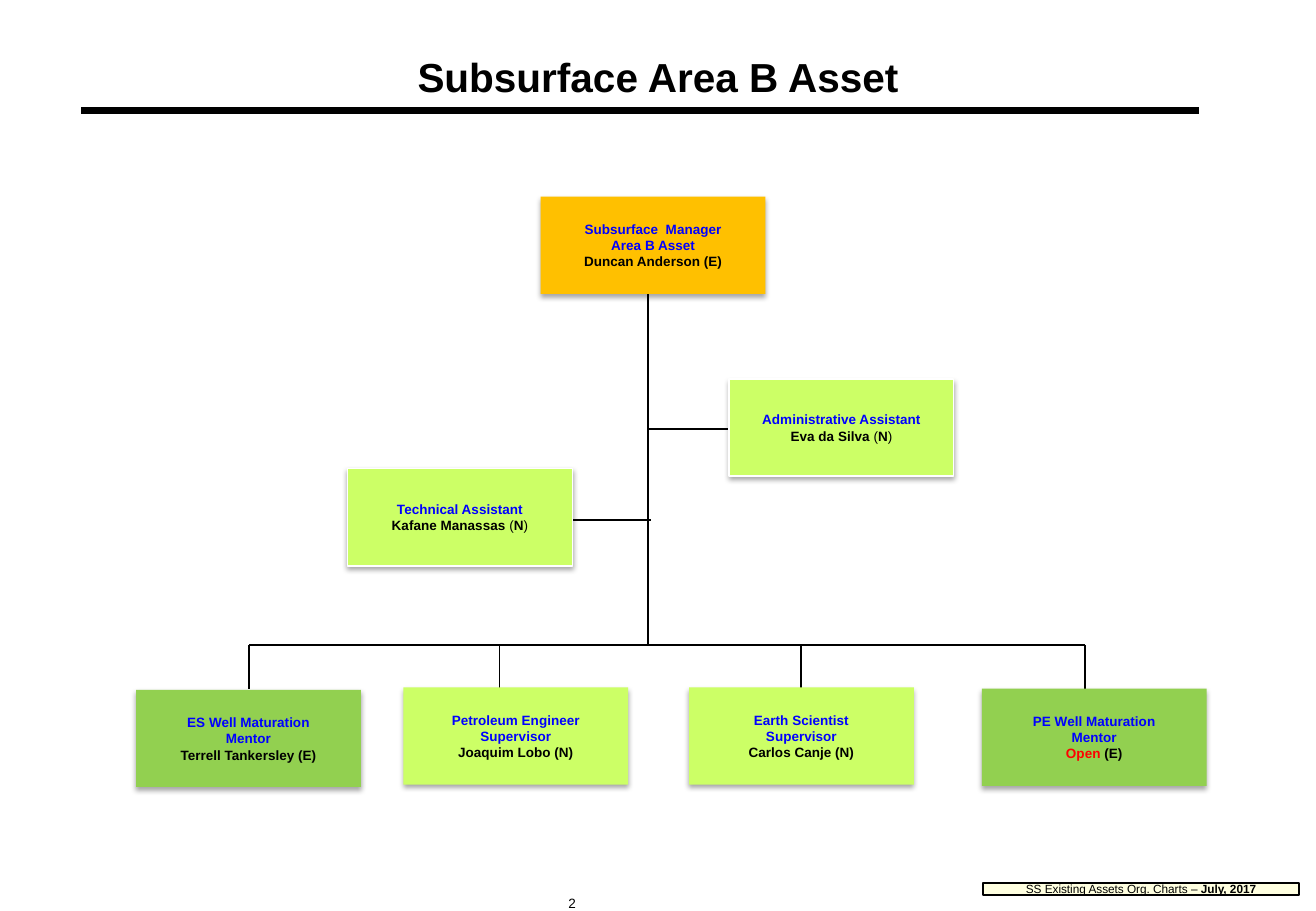
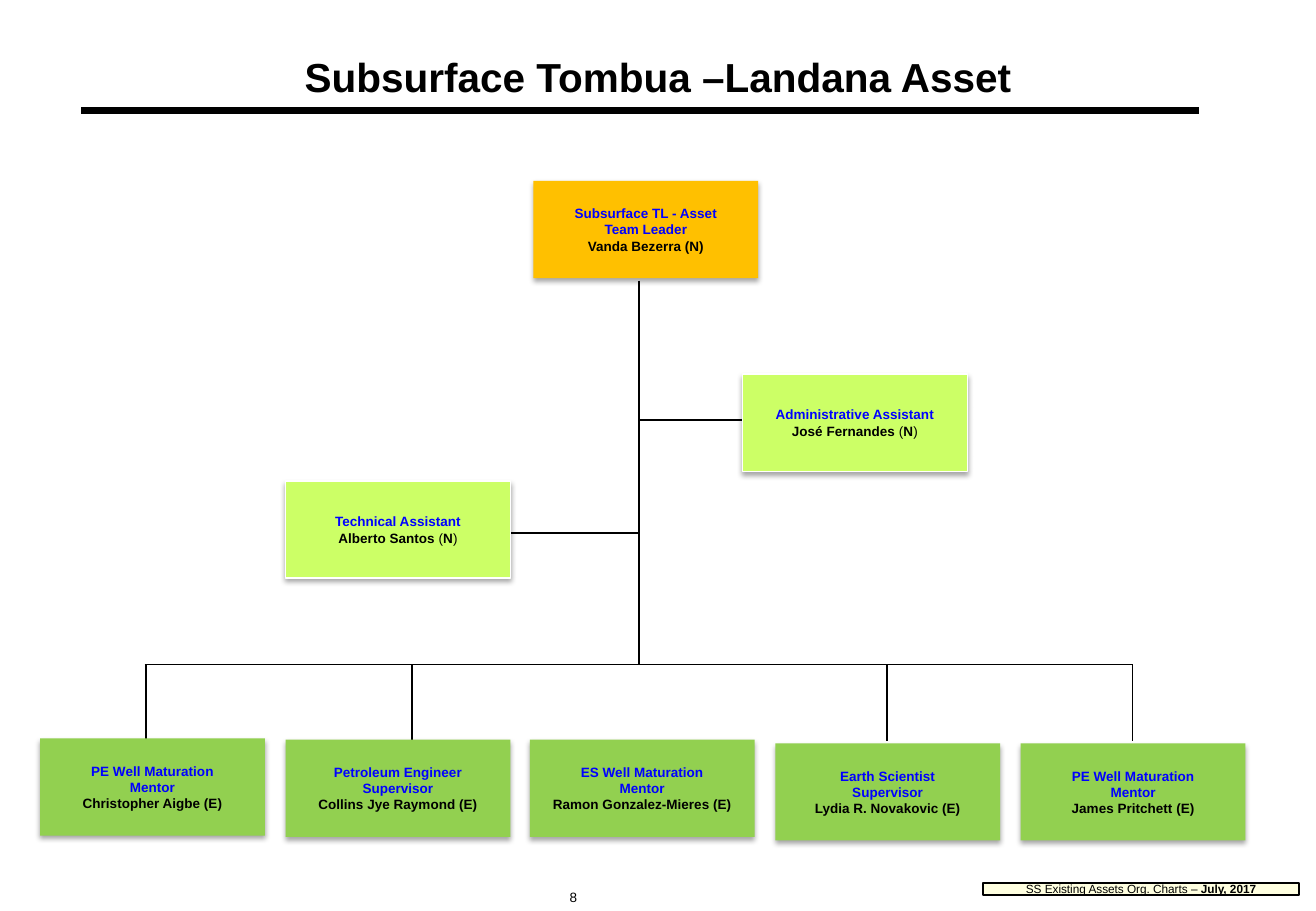
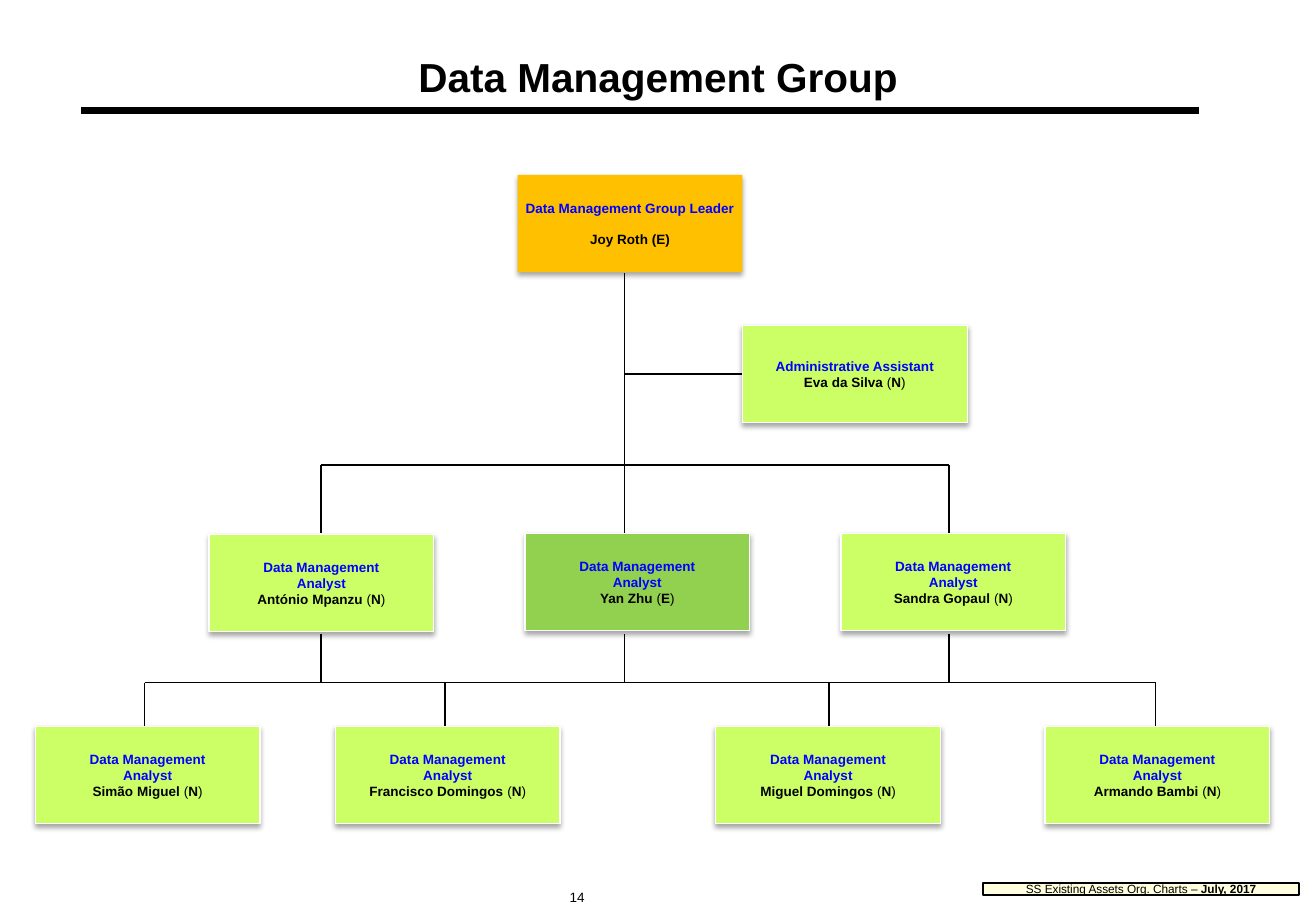
from lxml import etree
from pptx import Presentation
from pptx import util as u
from pptx.dml.color import RGBColor
from pptx.enum import shapes, text
from pptx.oxml.ns import qn

FONT = "Arial"
BLACK, WHITE, BLUE, RED = "000000", "FFFFFF", "0000FF", "FF0000"
LEADER_FILL, FOOTER_FILL = "FFC000", "FFFFCC"
STATUS_FILLS = {"E": "92D050", "N": "CCFF66"}
BOX_WIDTH, BOX_HEIGHT = 1.85, 0.8

ADMIN = ("Administrative Assistant",)
TECHNICAL = ("Technical Assistant",)
ANALYST = ("Data Management", "Analyst")
PETROLEUM = ("Petroleum Engineer", "Supervisor")
EARTH = ("Earth Scientist", "Supervisor")
ES_MENTOR = ("ES Well Maturation", "Mentor")
PE_MENTOR = ("PE Well Maturation", "Mentor")
OUTLINED_ROLES = (ADMIN, TECHNICAL, ANALYST)

FOOTER = [("SS Existing Assets Org. Charts – ", False), ("July, 2017", True)]

# boxes: left, top, role lines, name, status; the first box is the leader
# stems: x, top, bottom; bars: y, left, right
CHARTS = [
    {
        "title": "Subsurface Area B Asset",
        "number": ("2", 4.58, 7.32),
        "boxes": [
            (4.45, 1.62, ("Subsurface  Manager", "Area B Asset"), "Duncan Anderson", "E"),
            (6.0, 3.12, ADMIN, "Eva da Silva", "N"),
            (2.86, 3.86, TECHNICAL, "Kafane Manassas", "N"),
            (1.12, 5.68, ES_MENTOR, "Terrell Tankersley", "E"),
            (3.32, 5.66, PETROLEUM, "Joaquim Lobo", "N"),
            (5.67, 5.66, EARTH, "Carlos Canje", "N"),
            (8.08, 5.67, PE_MENTOR, "Open", "E"),
        ],
        "stems": [(5.33, 2.42, 5.31)] + [(x, 5.31, 5.67) for x in (2.05, 4.11, 6.59, 8.93)],
        "bars": [(3.53, 5.33, 6.0), (4.28, 4.71, 5.36), (5.31, 2.05, 8.93)],
    },
    {
        "title": "Subsurface Tombua –Landana Asset",
        "number": ("8", 4.59, 7.27),
        "boxes": [
            (4.39, 1.49, ("Subsurface TL - Asset", "Team Leader"), "Vanda Bezerra", "N"),
            (6.11, 3.08, ADMIN, "José Fernandes", "N"),
            (2.35, 3.96, TECHNICAL, "Alberto Santos", "N"),
            (0.33, 6.08, PE_MENTOR, "Christopher Aigbe", "E"),
            (2.35, 6.09, PETROLEUM, "Collins Jye Raymond", "E"),
            (4.36, 6.09, ES_MENTOR, "Ramon Gonzalez-Mieres", "E"),
            (6.38, 6.12, EARTH, "Lydia R. Novakovic", "E"),
            (8.4, 6.12, PE_MENTOR, "James Pritchett", "E"),
        ],
        "stems": [(5.26, 2.31, 5.47)] + [(x, 5.47, 6.1) for x in (1.2, 3.39, 7.3, 9.32)],
        "bars": [(3.46, 5.26, 6.11), (4.39, 4.2, 5.26), (5.47, 1.19, 9.32)],
    },
    {
        "title": "Data Management Group",
        "number": ("14", 4.59, 7.27),
        "boxes": [
            (4.26, 1.44, ("Data Management Group Leader",), "Joy Roth", "E"),
            (6.11, 2.68, ADMIN, "Eva da Silva", "N"),
            (1.72, 4.4, ANALYST, "António Mpanzu", "N"),
            (4.32, 4.39, ANALYST, "Yan Zhu", "E"),
            (6.92, 4.39, ANALYST, "Sandra Gopaul", "N"),
            (0.29, 5.98, ANALYST, "Simão Miguel", "N"),
            (2.76, 5.98, ANALYST, "Francisco Domingos", "N"),
            (5.89, 5.98, ANALYST, "Miguel Domingos", "N"),
            (8.6, 5.98, ANALYST, "Armando Bambi", "N"),
        ],
        "stems": [(5.14, 2.25, 4.39)]
        + [(x, 3.83, 4.39) for x in (2.64, 7.81)]
        + [(x, 5.22, 5.62) for x in (2.64, 5.14, 7.81)]
        + [(x, 5.62, 5.99) for x in (1.19, 3.66, 6.82, 9.51)],
        "bars": [(3.08, 5.14, 6.11), (3.83, 2.64, 7.81), (5.62, 1.19, 9.51)],
    },
]


def color(value):
    return RGBColor.from_string(value)


def inches(*values):
    return [u.Inches(value) for value in values]


def add_run(paragraph, words, size, tone=BLACK, bold=False):
    run = paragraph.add_run()
    run.text = words
    run.font.name, run.font.size, run.font.bold = FONT, u.Pt(size), bold
    run.font.color.rgb = color(tone)


def add_line(slide, x1, y1, x2, y2, width=1):
    line = slide.shapes.add_connector(shapes.MSO_CONNECTOR.STRAIGHT, *inches(x1, y1, x2, y2))
    line.line.color.rgb = color(BLACK)
    line.line.width = u.Pt(width)
    etree.SubElement(line.element.spPr, qn("a:effectLst"))
    return line


def add_panel(slide, left, top, width, height, fill):
    """Add a filled rectangle with small insets and no shadow or line."""
    panel = slide.shapes.add_shape(
        shapes.MSO_SHAPE.RECTANGLE, *inches(left, top, width, height))
    panel.shadow.inherit = False
    panel.fill.solid()
    panel.fill.fore_color.rgb = color(fill)
    panel.line.fill.background()
    frame = panel.text_frame
    frame.vertical_anchor = text.MSO_ANCHOR.MIDDLE
    frame.margin_left = frame.margin_right = u.Inches(0.05)
    frame.margin_top = frame.margin_bottom = u.Inches(0.05)
    frame.paragraphs[0].alignment = text.PP_ALIGN.CENTER
    return panel


def set_alpha(color_element, percent):
    etree.SubElement(color_element, qn("a:alpha"), val=str(percent * 1000))


def add_soft_shadow(shape):
    effects = shape.element.spPr.find(qn("a:effectLst"))
    shadow = etree.SubElement(
        effects, qn("a:outerShdw"), blurRad=str(u.Pt(3.1)), dist=str(u.Pt(1.8)),
        dir="5400000", rotWithShape="0")
    set_alpha(etree.SubElement(shadow, qn("a:srgbClr"), val=BLACK), 35)


def add_box(slide, left, top, role, name, status, leader):
    fill = LEADER_FILL if leader else STATUS_FILLS[status]
    outlined = role in OUTLINED_ROLES
    box = add_panel(slide, left, top, BOX_WIDTH, BOX_HEIGHT, fill)
    add_soft_shadow(box)
    if outlined:
        box.line.color.rgb = color(WHITE)
        box.line.width = u.Pt(0.75)

    frame = box.text_frame
    paragraph = frame.paragraphs[0]
    for line in role:
        add_run(paragraph, line, 8, BLUE, True)
        paragraph = frame.add_paragraph()
        paragraph.alignment = text.PP_ALIGN.CENTER
    if leader and len(role) == 1:
        paragraph.space_before = u.Pt(9)
    add_run(paragraph, name + " ", 8, RED if name == "Open" else BLACK, True)
    for part in ("(", status, ")"):
        add_run(paragraph, part, 8, BLACK, not outlined or part == status)


def dress_layout(layout, slide):
    """Draw the rule and footer on the slide, move them to the layout, place its title."""
    rule = add_line(slide, 0.67, 0.91, 9.87, 0.91, 3.75)
    footer = add_panel(slide, 8.09, 7.27, 2.6, 0.1, FOOTER_FILL)
    set_alpha(footer.element.spPr.find(f"{qn('a:solidFill')}/{qn('a:srgbClr')}"), 60)
    footer.line.color.rgb = color(BLACK)
    footer.line.width = u.Pt(1)
    footer.text_frame.word_wrap = False
    for words, bold in FOOTER:
        add_run(footer.text_frame.paragraphs[0], words, 7, bold=bold)
    for number, shape in enumerate((rule, footer), 20):
        shape.element.xpath(".//p:cNvPr")[0].set("id", str(number))
        layout.shapes.element.append(shape.element)

    title = layout.placeholders[0]
    title.left, title.top, title.width, title.height = inches(0, 0, 10.83, 0.83)
    frame = title.text_frame
    frame.auto_size = text.MSO_AUTO_SIZE.NONE
    frame.vertical_anchor = text.MSO_ANCHOR.BOTTOM
    frame.margin_bottom = 0


def fill_slide(slide, chart):
    paragraph = slide.shapes.title.text_frame.paragraphs[0]
    paragraph.alignment = text.PP_ALIGN.CENTER
    add_run(paragraph, chart["title"], 24, bold=True)

    number, left, top = chart["number"]
    number_box = slide.shapes.add_textbox(*inches(left, top, 1.67, 0.23))
    number_box.text_frame.word_wrap = True
    add_run(number_box.text_frame.paragraphs[0], number, 8)

    for x, top, bottom in chart["stems"]:
        add_line(slide, x, top, x, bottom)
    for y, left, right in chart["bars"]:
        add_line(slide, left, y, right, y)
    for index, box in enumerate(chart["boxes"]):
        add_box(slide, *box, leader=index == 0)


def main():
    presentation = Presentation()
    presentation.slide_width, presentation.slide_height = inches(10.83, 7.5)
    layout = presentation.slide_layouts[5]
    for index, chart in enumerate(CHARTS):
        slide = presentation.slides.add_slide(layout)
        if index == 0:
            dress_layout(layout, slide)
        fill_slide(slide, chart)
    presentation.save("out.pptx")


if __name__ == "__main__":
    main()
